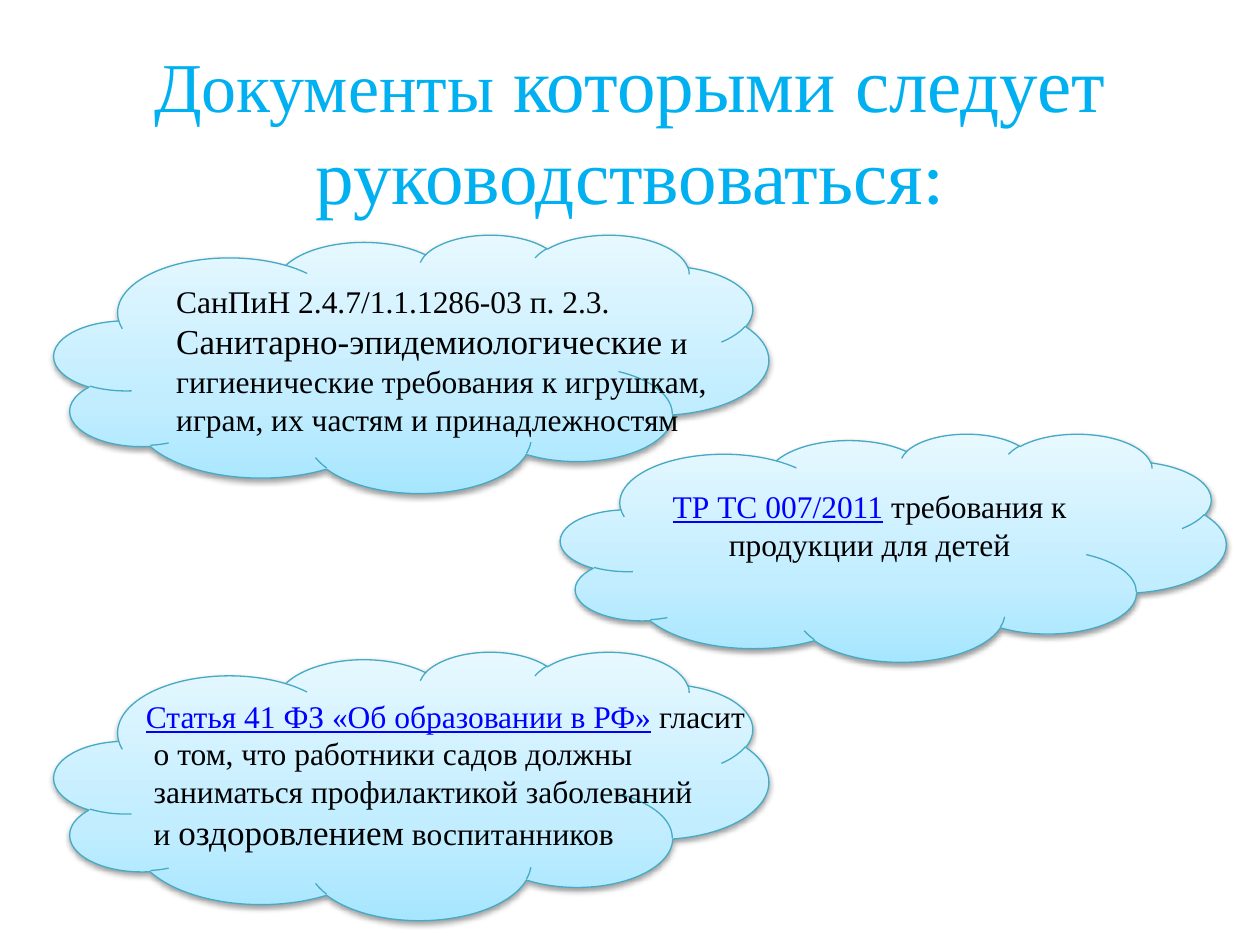
from lxml import etree
from pptx import Presentation
from pptx import util as u
from pptx.dml.color import RGBColor
from pptx.enum import shapes, text
from pptx.oxml import ns

COLORS = {
    "title": "00B0F0", "link": "0000FF", "body": "000000", "edge": "46AAC5",
    "deep": "A7E6FF", "middle": "C1EDFF", "pale": "E7F8FF", "shadow": "000000",
}
SERIF = "Times New Roman"
GRADIENT = ((0, "deep"), (35, "middle"), (100, "pale"))


def add_node(parent, tag, **attributes):
    """Append a drawing element with its attributes."""
    values = {key: str(value) for key, value in attributes.items()}
    return etree.SubElement(parent, ns.qn(tag), values)


def add_color(parent, name):
    """Append a named colour to a drawing element."""
    return add_node(parent, "a:srgbClr", val=COLORS[name])


def add_cloud(page, box):
    """Draw a gradient cloud with a soft shadow in the given box."""
    cloud = page.shapes.add_shape(shapes.MSO_SHAPE.CLOUD, *map(u.Inches, box))
    cloud.line.color.rgb = RGBColor.from_string(COLORS["edge"])
    cloud.line.width = u.Pt(0.75)
    cloud.shadow.inherit = False
    cloud.fill.gradient()
    gradient = cloud._element.spPr.find(ns.qn("a:gradFill"))
    gradient.clear()
    gradient.set("rotWithShape", "1")
    stops = add_node(gradient, "a:gsLst")
    for position, name in GRADIENT:
        add_color(add_node(stops, "a:gs", pos=position * 1000), name)
    add_node(gradient, "a:lin", ang=270 * 60000, scaled=1)
    effects = cloud._element.spPr.find(ns.qn("a:effectLst"))
    shadow = add_node(effects, "a:outerShdw", blurRad=u.Pt(3.1), dist=u.Pt(1.6),
                      dir=90 * 60000, rotWithShape=0)
    add_node(add_color(shadow, "shadow"), "a:alpha", val=38000)
    return cloud


def write_spans(para, spans, align):
    """Fill a paragraph with spans of wording, size, colour name and font."""
    para.alignment = align
    for wording, size, color, font in spans:
        span = para.add_run()
        span.text = wording
        span.font.size = u.Pt(size)
        span.font.name = font
        span.font.color.rgb = RGBColor.from_string(COLORS[color])
        span.font.underline = color == "link"


def add_text(page, box, paragraphs, align, anchor, hanging=0):
    """Place a wrapping text box with the given paragraphs."""
    frame = page.shapes.add_textbox(*map(u.Inches, box)).text_frame
    frame.word_wrap = True
    frame.vertical_anchor = anchor
    for index, spans in enumerate(paragraphs):
        para = frame.add_paragraph() if index else frame.paragraphs[0]
        if hanging:
            properties = para._p.get_or_add_pPr()
            properties.set("marL", str(u.Inches(hanging)))
            properties.set("indent", str(-u.Inches(hanging)))
        write_spans(para, spans, align)


def add_title(page, box):
    """Write the slide heading."""
    spans = [("Документы", 40, "title", SERIF),
             (" которыми следует руководствоваться", 44, "title", SERIF),
             (":", 44, "title", "Calibri")]
    add_text(page, box, [spans], text.PP_ALIGN.CENTER, text.MSO_ANCHOR.MIDDLE)


def add_regulation(page, box):
    """Place the cloud about the technical regulation."""
    frame = add_cloud(page, box).text_frame
    frame.word_wrap = True
    frame.vertical_anchor = text.MSO_ANCHOR.MIDDLE
    frame.margin_bottom = u.Inches(0.32)
    spans = [("ТР ТС 007/2011", 18, "link", SERIF),
             (" требования к продукции для детей", 18, "body", SERIF)]
    write_spans(frame.paragraphs[0], spans, text.PP_ALIGN.CENTER)


def add_law(page, box):
    """Place the cloud about the education law."""
    add_cloud(page, box)
    left, top = box[:2]
    paragraphs = [
        [("Статья 41 ФЗ «Об образовании в РФ»", 18, "link", SERIF),
         (" гласит", 18, "body", SERIF)],
        [(" о том, что работники садов должны", 18, "body", SERIF)],
        [(" заниматься профилактикой заболеваний", 18, "body", SERIF)],
        [(" и ", 18, "body", SERIF), ("оздоровлением", 20, "body", SERIF),
         (" воспитанников", 18, "body", SERIF)],
    ]
    add_text(page, (left + 0.63, top + 0.31, 4.96, 1.35), paragraphs,
             text.PP_ALIGN.JUSTIFY, text.MSO_ANCHOR.TOP, hanging=0.5)


def add_sanitary_rules(page, box):
    """Place the cloud about the sanitary rules for toys."""
    add_cloud(page, box)
    left, top = box[:2]
    spans = [("СанПиН 2.4.7/1.1.1286-03 п. 2.3. ", 18, "body", SERIF),
             ("Санитарно-эпидемиологические", 20, "body", SERIF),
             (" и гигиенические требования к игрушкам, играм, их частям"
              " и принадлежностям", 18, "body", SERIF)]
    add_text(page, (left + 0.87, top + 0.32, 4.72, 1.35), [spans],
             text.PP_ALIGN.LEFT, text.MSO_ANCHOR.MIDDLE)


def main():
    """Build the slide and save the deck."""
    deck = Presentation()
    deck.slide_width, deck.slide_height = u.Inches(10), u.Inches(7.5)
    page = deck.slides.add_slide(deck.slide_layouts[6])
    add_title(page, (0.75, 0.21, 8.5, 1.61))
    add_regulation(page, (4.45, 3.44, 5.28, 1.81))
    add_law(page, (0.43, 5.17, 5.67, 2.13))
    add_sanitary_rules(page, (0.43, 1.86, 5.67, 2.05))
    deck.save("out.pptx")


if __name__ == "__main__":
    main()
